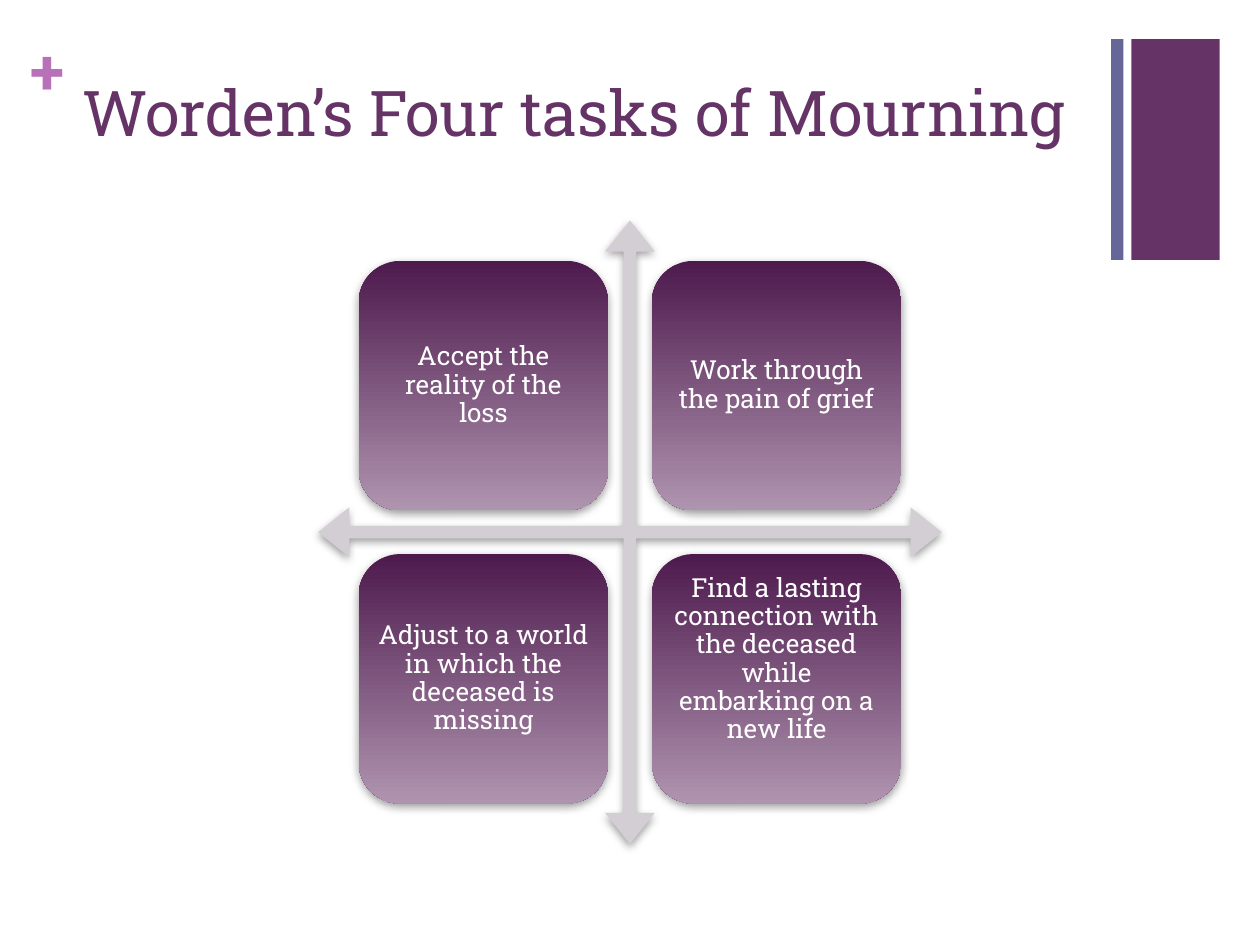
import pptx
import pptx.util
import pptx.dml.color
import pptx.enum.shapes
import pptx.enum.text
import pptx.oxml
import pptx.oxml.ns
from dataclasses import dataclass

Cm, Pt = pptx.util.Cm, pptx.util.Pt
SHAPE = pptx.enum.shapes.MSO_SHAPE
ANCHOR = pptx.enum.text.MSO_ANCHOR
ALIGN = pptx.enum.text.PP_ALIGN

HEADING = "Worden’s Four tasks of Mourning"
# Each task: text, extra space below it (cm)
TASKS = [
    ("Accept the reality of the loss", 0),
    ("Work through the pain of grief", 0),
    ("Adjust to a world in which the deceased is missing", 0),
    ("Find a lasting connection with the deceased while embarking on a new life", 0.78),
]
# Corner bars: left, width (cm), theme colour
BARS = [(22.81, 1.78, "purple"), (22.4, 0.25, "blue")]
BAR_TOP, BAR_HEIGHT = 0.79, 4.45

# Matrix geometry (cm)
CENTRE_X, CENTRE_Y = 12.7, 10.73
ARROW_SIZE, TILE_SIZE, TILE_GAP = 12.57, 5.03, 0.88
TILE_INSET = 0.15


@dataclass(frozen=True)
class Theme:
    font: str = "Roboto Slab"
    purple: str = "663366"
    blue: str = "666699"
    plus: str = "B870B8"
    arrow: str = "D3CED3"
    tile_top: str = "4D1A4D"
    tile_bottom: str = "AF94AF"
    tile_text: str = "FFFFFF"
    shadow: str = "808080"
    heading_size: int = 36
    tile_size: int = 15


THEME = Theme()


def rgb(value):
    return pptx.dml.color.RGBColor.from_string(value)


def style(paragraph, size, color, bold=False):
    paragraph.font.name = THEME.font
    paragraph.font.size = Pt(size)
    paragraph.font.bold = bold
    paragraph.font.color.rgb = rgb(color)


def set_insets(frame, side, bottom=None):
    frame.margin_left = frame.margin_right = frame.margin_top = Cm(side)
    frame.margin_bottom = Cm(side if bottom is None else bottom)


def add_plain(slide, preset, left, top, width, height):
    shape = slide.shapes.add_shape(preset, Cm(left), Cm(top), Cm(width), Cm(height))
    shape.shadow.inherit = False
    shape.line.fill.background()
    return shape


def add_soft_shadow(shape):
    """Fill the shape's empty effect list with a shadow falling downwards."""
    effects = shape._element.spPr.find(pptx.oxml.ns.qn("a:effectLst"))
    effects.append(pptx.oxml.parse_xml(
        f'<a:outerShdw {pptx.oxml.ns.nsdecls("a")} blurRad="{Pt(5)}" dist="{Pt(2)}" '
        f'dir="5400000" rotWithShape="0"><a:srgbClr val="{THEME.shadow}">'
        '<a:alpha val="75000"/></a:srgbClr></a:outerShdw>'))


def add_decoration(slide):
    for left, width, color in BARS:
        bar = add_plain(slide, SHAPE.RECTANGLE, left, BAR_TOP, width, BAR_HEIGHT)
        bar.fill.solid()
        bar.fill.fore_color.rgb = rgb(getattr(THEME, color))
    plus = slide.shapes.add_textbox(Cm(0.61), Cm(0.64), Cm(0.74), Cm(1.55)).text_frame
    set_insets(plus, 0)
    plus.text = "+"
    style(plus.paragraphs[0], THEME.heading_size, THEME.plus, bold=True)


def add_heading(slide):
    heading = slide.shapes.title
    heading.left, heading.top = Cm(1.4), Cm(1.35)
    heading.width, heading.height = Cm(20.98), Cm(3.1)
    frame = heading.text_frame
    frame.text = HEADING
    frame.word_wrap = True
    frame.vertical_anchor = ANCHOR.TOP
    frame.paragraphs[0].alignment = ALIGN.LEFT
    style(frame.paragraphs[0], THEME.heading_size, THEME.purple)


def add_cross(slide):
    cross = add_plain(slide, SHAPE.QUAD_ARROW, CENTRE_X - ARROW_SIZE / 2,
                      CENTRE_Y - ARROW_SIZE / 2, ARROW_SIZE, ARROW_SIZE)
    for index, ratio in enumerate((0.02, 0.04, 0.05)):
        cross.adjustments[index] = ratio
    cross.fill.solid()
    cross.fill.fore_color.rgb = rgb(THEME.arrow)
    add_soft_shadow(cross)


def add_tile(slide, left, top, task, space_below):
    tile = add_plain(slide, SHAPE.ROUNDED_RECTANGLE, left, top, TILE_SIZE, TILE_SIZE)
    tile.fill.gradient()
    tile.fill.gradient_angle = 270
    for stop, color in zip(tile.fill.gradient_stops, (THEME.tile_top, THEME.tile_bottom)):
        stop.color.rgb = rgb(color)
    add_soft_shadow(tile)

    frame = tile.text_frame
    frame.word_wrap = True
    frame.vertical_anchor = ANCHOR.MIDDLE
    set_insets(frame, TILE_INSET, TILE_INSET + space_below)
    frame.text = task
    paragraph = frame.paragraphs[0]
    paragraph.alignment = ALIGN.CENTER
    paragraph.line_spacing = 0.9
    style(paragraph, THEME.tile_size, THEME.tile_text)


def main():
    deck = pptx.Presentation()
    deck.slide_width, deck.slide_height = Cm(25.4), Cm(19.05)
    slide = deck.slides.add_slide(deck.slide_layouts[5])
    add_decoration(slide)
    add_heading(slide)
    add_cross(slide)
    pitch = TILE_SIZE + TILE_GAP
    first_offset = TILE_SIZE + TILE_GAP / 2
    for index, (task, space_below) in enumerate(TASKS):
        row, column = divmod(index, 2)
        add_tile(slide, CENTRE_X - first_offset + column * pitch,
                 CENTRE_Y - first_offset + row * pitch, task, space_below)
    deck.save("out.pptx")


if __name__ == "__main__":
    main()
